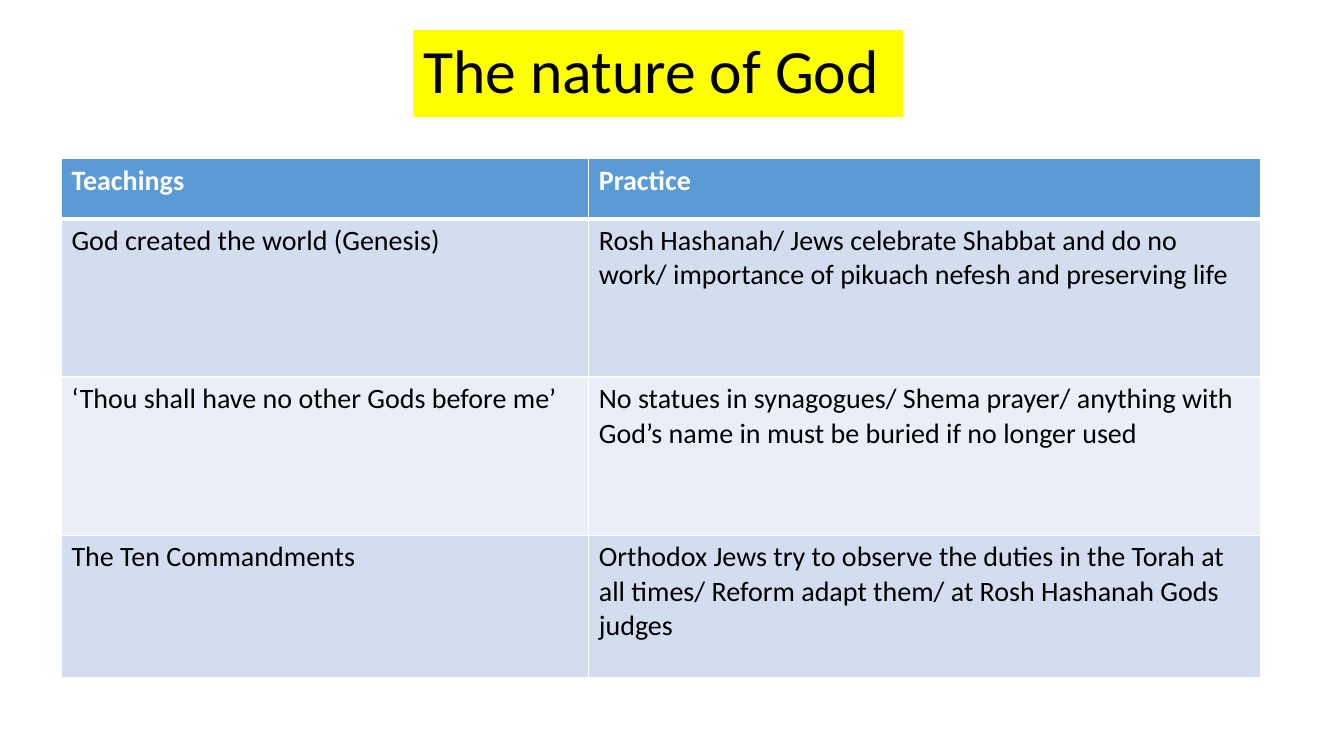
from dataclasses import dataclass

from lxml import etree
from pptx import Presentation
from pptx import util as u
from pptx.dml.color import RGBColor
from pptx.enum import text
from pptx.oxml.ns import qn


@dataclass(frozen=True)
class Theme:
    font: str = "Calibri"
    title_size: int = 44
    cell_size: int = 20
    black: str = "000000"
    white: str = "FFFFFF"
    title_fill: str = "FFFF00"
    header_fill: str = "5B9BD5"
    bands: tuple = ("D2DEEF", "EAEFF7")
    thin: int = 1
    thick: int = 3


class SlideBuilder:
    def __init__(self, slide, theme):
        self.s = slide
        self.theme = theme

    def fill(self, target, color):
        target.fill.solid()
        target.fill.fore_color.rgb = RGBColor.from_string(color)

    def add_text(self, tf, words, size, color, bold=False):
        p = tf.paragraphs[0]
        p.alignment = text.PP_ALIGN.LEFT
        r = p.add_run()
        r.text = words
        r.font.name = self.theme.font
        r.font.size = u.Pt(size)
        r.font.bold = bold
        r.font.color.rgb = RGBColor.from_string(color)
        return p

    def title(self, words, left, top, width, height):
        sp = self.s.shapes.title
        sp.left, sp.top = u.Inches(left), u.Inches(top)
        sp.width, sp.height = u.Inches(width), u.Inches(height)
        self.fill(sp, self.theme.title_fill)
        tf = sp.text_frame
        tf.word_wrap = True
        tf.auto_size = text.MSO_AUTO_SIZE.NONE
        tf.vertical_anchor = text.MSO_ANCHOR.MIDDLE
        p = self.add_text(tf, words, self.theme.title_size, self.theme.black)
        p.line_spacing = 0.9

    def borders(self, cell, top, bottom):
        tc_pr = cell._tc.get_or_add_tcPr()
        widths = {"lnL": self.theme.thin, "lnR": self.theme.thin,
                  "lnT": top, "lnB": bottom}
        # Border lines come before the fill in the cell properties
        for i, (tag, width) in enumerate(widths.items()):
            ln = etree.Element(qn(f"a:{tag}"), w=str(u.Pt(width)))
            solid = etree.SubElement(ln, qn("a:solidFill"))
            etree.SubElement(solid, qn("a:srgbClr"), val=self.theme.white)
            tc_pr.insert(i, ln)

    def table(self, rows, left, top, widths, heights):
        t = self.theme
        frame = self.s.shapes.add_table(
            len(rows), len(widths), u.Inches(left), u.Inches(top),
            u.Inches(sum(widths)), u.Inches(sum(heights)))
        table = frame.table
        for column, width in zip(table.columns, widths):
            column.width = u.Inches(width)
        for i, (row, height) in enumerate(zip(rows, heights)):
            table.rows[i].height = u.Inches(height)
            header = i == 0
            for j, words in enumerate(row):
                cell = table.cell(i, j)
                self.fill(cell, t.header_fill if header else t.bands[(i - 1) % 2])
                self.borders(cell, t.thick if i == 1 else t.thin,
                             t.thick if header else t.thin)
                self.add_text(cell.text_frame, words, t.cell_size,
                              t.white if header else t.black, header)


TEACHINGS = [
    ("Teachings", "Practice"),
    ("God created the world (Genesis)",
     "Rosh Hashanah/ Jews celebrate Shabbat and do no work/ "
     "importance of pikuach nefesh and preserving life"),
    ("‘Thou shall have no other Gods before me’",
     "No statues in synagogues/ Shema prayer/ anything with "
     "God’s name in must be buried if no longer used"),
    ("The Ten Commandments",
     "Orthodox Jews try to observe the duties in the Torah at all times/ "
     "Reform adapt them/ at Rosh Hashanah Gods judges"),
]


def main():
    prs = Presentation()
    prs.slide_width, prs.slide_height = u.Inches(13.33), u.Inches(7.5)
    title_only = prs.slide_layouts[5]
    builder = SlideBuilder(prs.slides.add_slide(title_only), Theme())

    # Heading
    builder.title("The nature of God", 4.1, 0.3, 4.86, 0.86)

    # Teachings and practices
    builder.table(TEACHINGS, 0.61, 1.57, (5.23, 6.66), (0.6, 1.57, 1.57, 1.41))

    prs.save("out.pptx")


if __name__ == "__main__":
    main()
